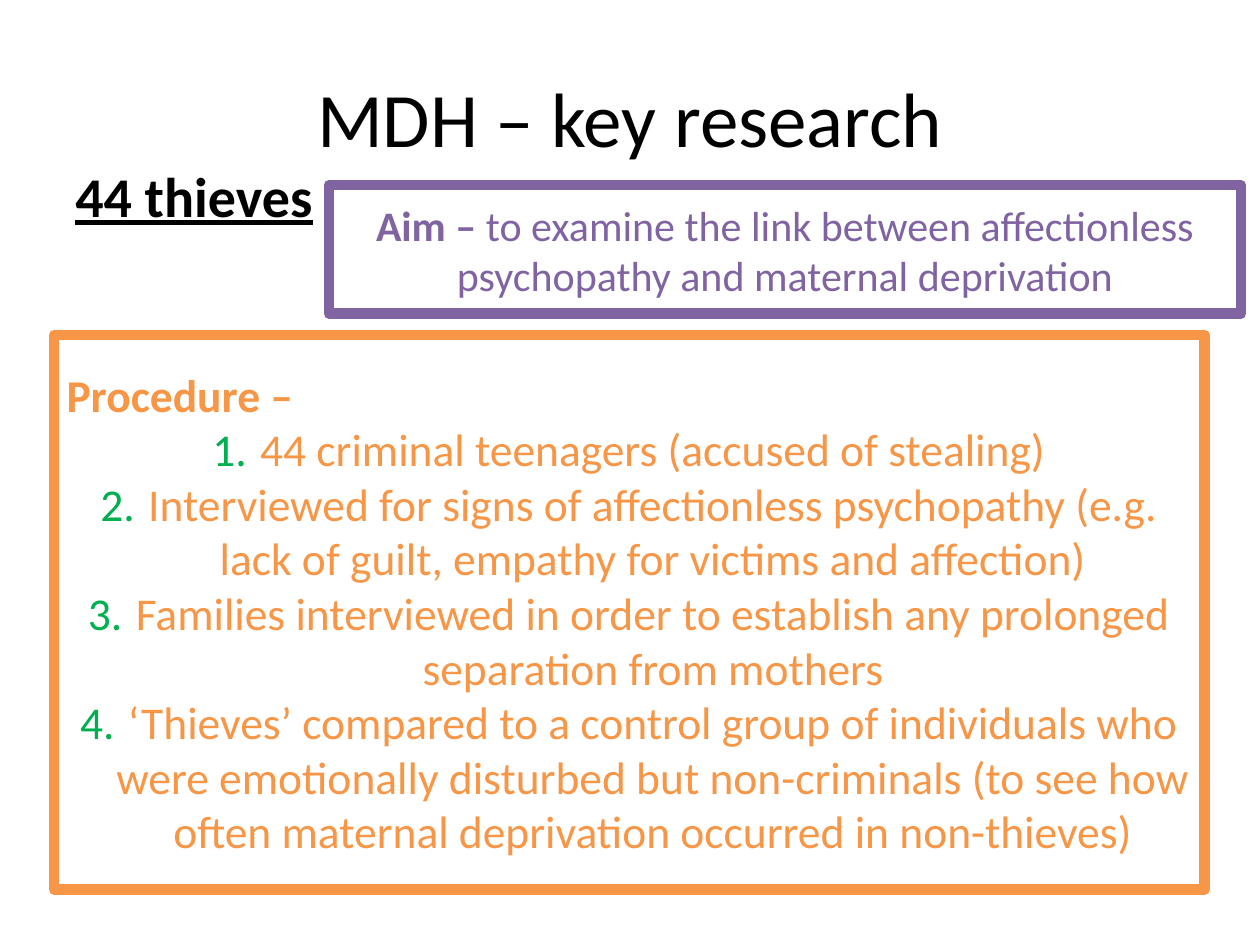
from lxml.etree import SubElement
from pptx import Presentation
from pptx.dml.color import RGBColor
from pptx.enum.shapes import MSO_SHAPE
from pptx.enum.text import MSO_ANCHOR, PP_ALIGN
from pptx.oxml.ns import qn
from pptx.util import Inches, Pt

BLACK = RGBColor(0x00, 0x00, 0x00)
WHITE = RGBColor(0xFF, 0xFF, 0xFF)
PURPLE = RGBColor(0x80, 0x64, 0xA2)
ORANGE = RGBColor(0xF7, 0x96, 0x46)
GREEN = RGBColor(0x00, 0xB0, 0x50)

STEPS = [
    "44 criminal teenagers (accused of stealing)",
    "Interviewed for signs of affectionless psychopathy (e.g. lack of guilt, "
    "empathy for victims and affection)",
    "Families interviewed in order to establish any prolonged separation from mothers",
    "‘Thieves’ compared to a control group of individuals who were emotionally "
    "disturbed but non-criminals (to see how often maternal deprivation occurred "
    "in non-thieves)",
]


def add_run(p, text, color, **formats):
    r = p.add_run()
    r.text = text
    r.font.color.rgb = color
    for name, value in {"name": "Calibri", **formats}.items():
        setattr(r.font, name, value)


def number_paragraph(p, color):
    pPr = p._p.get_or_add_pPr()
    indent = Inches(0.38)
    pPr.set("marL", str(indent))
    pPr.set("indent", str(-indent))
    buClr = SubElement(pPr, qn("a:buClr"))
    SubElement(buClr, qn("a:srgbClr"), val=str(color))
    SubElement(pPr, qn("a:buFont"), typeface="+mj-lt")
    SubElement(pPr, qn("a:buAutoNum"), type="arabicPeriod")


def add_heading(s, box, text, align, anchor, **formats):
    tf = s.shapes.add_textbox(*map(Inches, box)).text_frame
    tf.word_wrap = True
    tf.vertical_anchor = anchor
    p = tf.paragraphs[0]
    p.alignment = align
    add_run(p, text, BLACK, **formats)


def add_panel(s, box, color):
    sp = s.shapes.add_shape(MSO_SHAPE.RECTANGLE, *map(Inches, box))
    sp.shadow.inherit = False
    sp.fill.solid()
    sp.fill.fore_color.rgb = WHITE
    sp.line.color.rgb = color
    sp.line.width = Pt(6)
    SubElement(sp.line._get_or_add_ln(), qn("a:round"))
    tf = sp.text_frame
    tf.word_wrap = True
    tf.vertical_anchor = MSO_ANCHOR.MIDDLE
    return tf


def add_aim(s, box):
    p = add_panel(s, box, PURPLE).paragraphs[0]
    p.alignment = PP_ALIGN.CENTER
    add_run(p, "Aim –", PURPLE, size=Pt(24), bold=True)
    add_run(p, " to examine the link between affectionless psychopathy "
               "and maternal deprivation", PURPLE, size=Pt(24))


def add_procedure(s, box):
    tf = add_panel(s, box, ORANGE)
    p = tf.paragraphs[0]
    p.alignment = PP_ALIGN.LEFT
    add_run(p, "Procedure –", ORANGE, size=Pt(26), bold=True)
    for step in STEPS:
        p = tf.add_paragraph()
        p.alignment = PP_ALIGN.CENTER
        number_paragraph(p, GREEN)
        add_run(p, step, ORANGE, size=Pt(26))


def main():
    prs = Presentation()
    prs.slide_width, prs.slide_height = Inches(10), Inches(7.5)
    s = prs.slides.add_slide(prs.slide_layouts[6])
    add_heading(s, (0.5, 0.3, 9, 1.25), "MDH – key research",
                PP_ALIGN.CENTER, MSO_ANCHOR.MIDDLE, size=Pt(44))
    add_heading(s, (0.5, 1.23, 9, 4.95), "44 thieves",
                PP_ALIGN.LEFT, MSO_ANCHOR.TOP, size=Pt(32), bold=True, underline=True)
    add_aim(s, (2.61, 1.47, 7.24, 1.02))
    add_procedure(s, (0.43, 2.66, 9.13, 4.4))
    prs.save("out.pptx")


if __name__ == "__main__":
    main()
